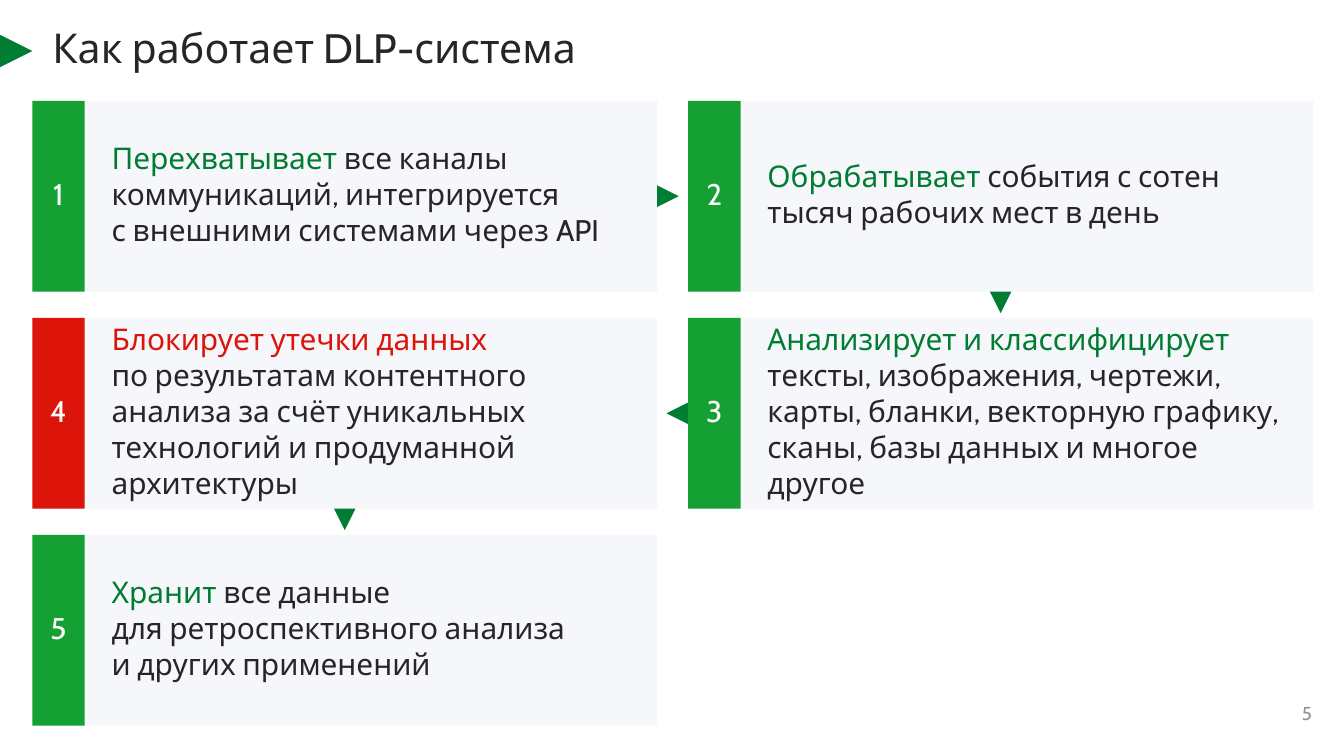
import pptx
import pptx.dml.color
import pptx.enum.shapes
import pptx.enum.text
import pptx.util

RGBColor = pptx.dml.color.RGBColor
Shape = pptx.enum.shapes.MSO_SHAPE
Align = pptx.enum.text.PP_ALIGN
Anchor = pptx.enum.text.MSO_ANCHOR
Inches = pptx.util.Inches
Pt = pptx.util.Pt

GREEN = RGBColor(0x14, 0xA0, 0x32)
DARK_GREEN = RGBColor(0x00, 0x7D, 0x32)
RED = RGBColor(0xDC, 0x14, 0x0A)
PALE = RGBColor(0xF5, 0xF7, 0xFA)
INK = RGBColor(0x26, 0x26, 0x26)
GRAY = RGBColor(0x8C, 0x91, 0x96)
WHITE = RGBColor(0xFF, 0xFF, 0xFF)

TIE, HARD_SPACE = "~", chr(160)
RIGHT, DOWN, LEFT = (1, 0, 90), (0, 1, 180), (-1, 0, 270)

STEPS = [
    (0, 0, "Перехватывает ", "все каналы коммуникаций, интегрируется с~внешними системами через~API",
     GREEN, DARK_GREEN, RIGHT),
    (1, 0, "Обрабатывает", "~события~с~сотен тысяч рабочих~мест в~день",
     GREEN, DARK_GREEN, DOWN),
    (1, 1, "Анализирует и~классифицирует ",
     "тексты, изображения, чертежи, карты, бланки, векторную графику, сканы, базы~данных и~многое другое",
     GREEN, DARK_GREEN, LEFT),
    (0, 1, "Блокирует утечки данных ",
     "по~результатам контентного анализа за~счёт уникальных технологий и~продуманной архитектуры",
     RED, RED, DOWN),
    (0, 2, "Хранит ", "все данные для~ретроспективного анализа и~других~применений",
     GREEN, DARK_GREEN, None),
]


def write(shape, *runs, size=16, align=Align.LEFT, anchor=Anchor.MIDDLE,
          margins=(0, 0, 0, 0), spacing=None):
    frame = shape.text_frame
    frame.word_wrap = True
    frame.vertical_anchor = anchor
    (frame.margin_left, frame.margin_top,
     frame.margin_right, frame.margin_bottom) = map(Inches, margins)
    paragraph = frame.paragraphs[0]
    paragraph.alignment = align
    if spacing:
        paragraph.line_spacing = Pt(spacing)
    for text, color in runs:
        run = paragraph.add_run()
        run.text = text.replace(TIE, HARD_SPACE)
        run.font.name = "Cabin"
        run.font.size = Pt(size)
        run.font.color.rgb = color


class StepSlide:
    """Hold the grid and style of a slide of numbered steps."""

    left, top, width, height = 0.24, 0.75, 9.53, 4.65
    card_width, card_height = 4.65, 1.42
    badge_width, arrow_size = 0.39, 0.16
    column_step = width - card_width
    row_step = (height - card_height) / 2

    def __init__(self, presentation):
        self.slide = presentation.slides.add_slide(presentation.slide_layouts[6])

    def corner(self, column, row):
        return self.left + column * self.column_step, self.top + row * self.row_step

    def shape(self, kind, left, top, width, height, color):
        shape = self.slide.shapes.add_shape(kind, *map(Inches, (left, top, width, height)))
        shape.shadow.inherit = False
        shape.fill.solid()
        shape.fill.fore_color.rgb = color
        shape.line.fill.background()
        return shape

    def label(self, text, left, top, width, height, color, **style):
        box = self.slide.shapes.add_textbox(*map(Inches, (left, top, width, height)))
        write(box, (text, color), **style)

    def card(self, column, row, lead, body, color):
        shape = self.shape(Shape.RECTANGLE, *self.corner(column, row),
                           self.card_width, self.card_height, PALE)
        write(shape, (lead, color), (body, INK), margins=(0.59, 0, 0.16, 0.04))

    def badge(self, column, row, number, color):
        shape = self.shape(Shape.RECTANGLE, *self.corner(column, row),
                           self.badge_width, self.card_height, color)
        write(shape, (str(number), WHITE), align=Align.CENTER, margins=(0, 0, 0, 0.04))

    def triangle(self, left, top, size, rotation):
        shape = self.shape(Shape.ISOSCELES_TRIANGLE, left, top, size, size, DARK_GREEN)
        shape.rotation = rotation

    def arrow(self, column, row, direction):
        across, down, rotation = direction
        left, top = self.corner(column, row)
        size = self.arrow_size
        center_x = left + (self.card_width + across * (self.card_width + size)) / 2
        center_y = top + (self.card_height + down * (self.card_height + size)) / 2
        self.triangle(center_x - size / 2, center_y - size / 2, size, rotation)


def main():
    presentation = pptx.Presentation()
    presentation.slide_width = Inches(10)
    presentation.slide_height = Inches(10 * 9 / 16)
    page = StepSlide(presentation)

    page.label("5", 9.37, 5, 0.39, 0.39, GRAY, size=10, align=Align.RIGHT, anchor=Anchor.BOTTOM)
    page.triangle(0, 0.26, 0.24, 90)
    page.label("Как работает DLP-система", 0.39, 0.2, 7.32, 0.39, INK,
               size=22, anchor=Anchor.TOP, spacing=24)

    for column, row, lead, body, _, lead_color, _ in STEPS:
        page.card(column, row, lead, body, lead_color)
    for number, (column, row, _, _, badge_color, _, direction) in enumerate(STEPS, 1):
        if direction:
            page.arrow(column, row, direction)
        page.badge(column, row, number, badge_color)

    presentation.save("out.pptx")


if __name__ == "__main__":
    main()
